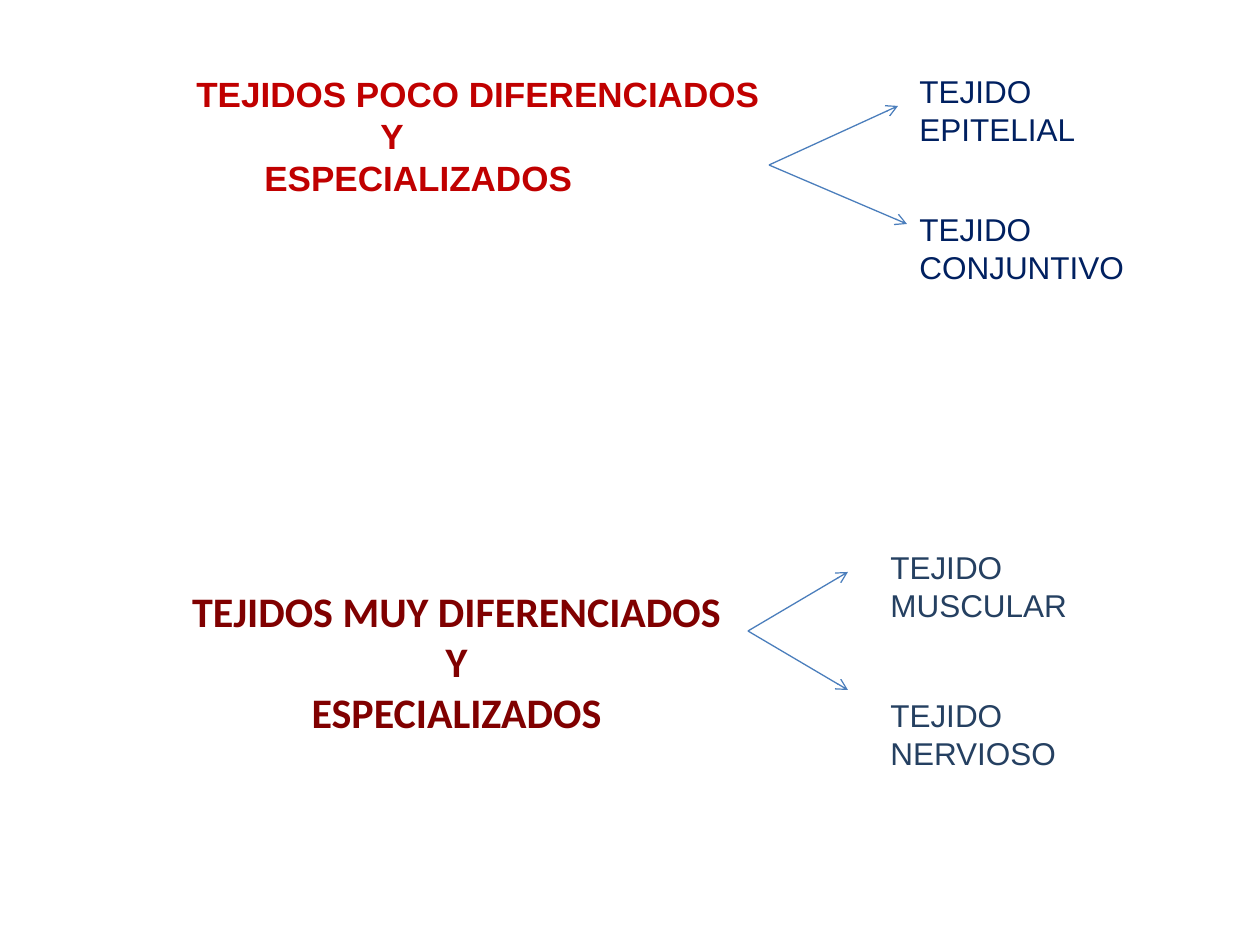
import pptx
import pptx.dml.color
import pptx.enum.shapes
import pptx.enum.text
import pptx.oxml
import pptx.oxml.ns
import pptx.util

EMU_PER_PX = 914400 / 126
COLORS = {
    "background": "FFFFFF",
    "arrow": "4B7EBC",
    "low_heading": "C00000",
    "low_label": "002060",
    "high_heading": "800000",
    "high_label": "254061",
}


def px(length):
    """Turn a length in px into EMU."""
    return pptx.util.Emu(round(length * EMU_PER_PX))


def color(name):
    """Look up a colour by its role."""
    return pptx.dml.color.RGBColor.from_string(COLORS[name])


def add_text(slide, box, text, size, color_name, font="Arial", bold=False):
    """Add a wrapping text box and return its text frame."""
    text_frame = slide.shapes.add_textbox(*map(px, box)).text_frame
    text_frame.word_wrap = True
    text_frame.text = text
    for paragraph in text_frame.paragraphs:
        for run in paragraph.runs:
            run.font.name = font
            run.font.size = pptx.util.Pt(size)
            run.font.bold = bold
            run.font.color.rgb = color(color_name)
    return text_frame


def add_low_heading(slide):
    """Add the upper heading, each line with its own indent."""
    text_frame = add_text(
        slide, (184, 66, 893, 140),
        "TEJIDOS POCO DIFERENCIADOS\nY\nESPECIALIZADOS",
        20, "low_heading", bold=True)
    for paragraph, indent in zip(text_frame.paragraphs, (0, 184, 68)):
        paragraph._p.get_or_add_pPr().set("marL", str(px(indent)))


def add_high_heading(slide):
    """Add the lower heading, centred over three lines."""
    text_frame = add_text(
        slide, (54, 582, 805, 158),
        "TEJIDOS MUY DIFERENCIADOS\vY\vESPECIALIZADOS",
        24, "high_heading", font="Calibri", bold=True)
    text_frame.vertical_anchor = pptx.enum.text.MSO_ANCHOR.MIDDLE
    text_frame.paragraphs[0].alignment = pptx.enum.text.PP_ALIGN.CENTER


def add_arrow(slide, start, end):
    """Add a thin straight line with an open arrowhead at its end."""
    connector = slide.shapes.add_connector(
        pptx.enum.shapes.MSO_CONNECTOR.STRAIGHT, *map(px, start + end))
    connector.line.color.rgb = color("arrow")
    connector.line.width = pptx.util.Pt(0.75)
    line = connector.line._get_or_add_ln()
    line.append(pptx.oxml.parse_xml(
        f'<a:tailEnd {pptx.oxml.ns.nsdecls("a")} type="arrow"/>'))
    connector._element.spPr.append(pptx.oxml.parse_xml(
        f'<a:effectLst {pptx.oxml.ns.nsdecls("a")}/>'))


def add_branches(slide, origin, tips, labels, color_name):
    """Add the arrows that fan out from a heading and their labels."""
    for tip in tips:
        add_arrow(slide, origin, tip)
    for text, left, top, width in labels:
        add_text(slide, (left, top, width, 50), text, 18, color_name)


def main():
    """Build and save the slide."""
    presentation = pptx.Presentation()
    presentation.slide_width = px(1260)
    presentation.slide_height = px(945)
    slide = presentation.slides.add_slide(presentation.slide_layouts[6])
    slide.background.fill.solid()
    slide.background.fill.fore_color.rgb = color("background")

    add_high_heading(slide)
    add_branches(
        slide, (748, 631), [(848, 572), (848, 690)],
        [("TEJIDO MUSCULAR", 878, 542, 318),
         ("TEJIDO NERVIOSO", 878, 690, 287)],
        "high_label")

    add_low_heading(slide)
    add_branches(
        slide, (769, 165), [(898, 106), (907, 224)],
        [("TEJIDO EPITELIAL", 907, 66, 297),
         ("TEJIDO CONJUNTIVO", 907, 204, 328)],
        "low_label")

    presentation.save("out.pptx")


if __name__ == "__main__":
    main()
